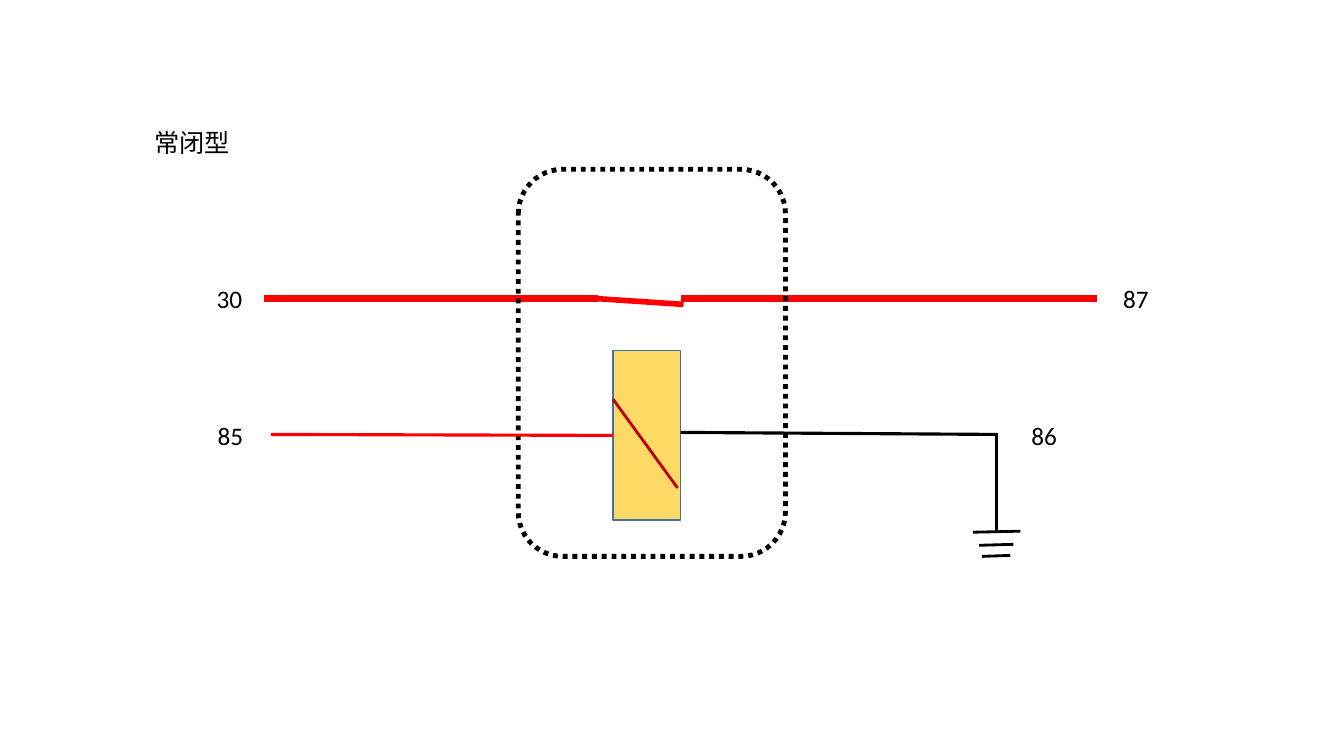
"""Builds a slide with the circuit diagram of a normally closed relay."""
from lxml import etree
from pptx import Presentation
from pptx import util as u
from pptx.dml.color import RGBColor
from pptx.enum import dml, shapes, text
from pptx.oxml import ns

BLACK = RGBColor(0x00, 0x00, 0x00)
RED = RGBColor(0xFF, 0x00, 0x00)
DARK_RED = RGBColor(0xC0, 0x00, 0x00)
YELLOW = RGBColor(0xFF, 0xD9, 0x66)
BLUE = RGBColor(0x43, 0x73, 0x9E)


class RelaySlide:
    font = "Calibri"
    size = u.Pt(18)

    def __init__(self, deck):
        self.slide = deck.slides.add_slide(deck.slide_layouts[5])

    def group(self):
        return self.slide.shapes.add_group_shape()

    def wire(self, start, end, color, width, group=None):
        ends = [u.Inches(value) for value in (*start, *end)]
        wire = (group or self.slide).shapes.add_connector(
            shapes.MSO_CONNECTOR.STRAIGHT, *ends)
        wire.line.color.rgb = color
        wire.line.width = u.Pt(width)
        etree.SubElement(wire._element.spPr, ns.qn("a:effectLst"))

    def block(self, kind, box, line, width, fill=None, dash=None, group=None):
        block = (group or self.slide).shapes.add_shape(
            kind, *[u.Inches(value) for value in box])
        block.shadow.inherit = False
        if fill is None:
            block.fill.background()
        else:
            block.fill.solid()
            block.fill.fore_color.rgb = fill
        block.line.color.rgb = line
        block.line.width = u.Pt(width)
        if dash is not None:
            block.line.dash_style = dash

    def fill_text(self, frame, words, align):
        frame.word_wrap = True
        frame.auto_size = text.MSO_AUTO_SIZE.SHAPE_TO_FIT_TEXT
        frame.vertical_anchor = text.MSO_ANCHOR.TOP
        frame.text = words
        paragraph = frame.paragraphs[0]
        paragraph.alignment = align
        paragraph.font.name = self.font
        paragraph.font.size = self.size
        paragraph.font.color.rgb = BLACK

    def title(self, words, box):
        title = self.slide.shapes.title
        title.left, title.top, title.width, title.height = [
            u.Inches(value) for value in box]
        self.fill_text(title.text_frame, words, text.PP_ALIGN.LEFT)

    def label(self, words, box, align=text.PP_ALIGN.LEFT):
        label = self.slide.shapes.add_textbox(
            *[u.Inches(value) for value in box])
        self.fill_text(label.text_frame, words, align)


def main():
    deck = Presentation()
    deck.slide_width, deck.slide_height = u.Inches(13.33), u.Inches(7.5)
    relay = RelaySlide(deck)
    relay.title("常闭型", (1.43, 1.21, 4.44, 0.4))

    relay.wire((5.88, 2.96), (6.78, 3.02), RED, 4)
    relay.wire((2.62, 2.96), (5.93, 2.96), RED, 4.5)
    relay.wire((6.75, 2.96), (10.88, 2.96), RED, 4.5)

    coil = relay.group()
    relay.block(shapes.MSO_SHAPE.RECTANGLE, (6.08, 3.48, 0.67, 1.68),
                BLUE, 1, fill=YELLOW, group=coil)
    relay.wire((6.08, 3.96), (6.72, 4.84), DARK_RED, 2, coil)

    relay.block(shapes.MSO_SHAPE.ROUNDED_RECTANGLE, (5.14, 1.68, 2.65, 3.84),
                BLACK, 3.5, dash=dml.MSO_LINE.ROUND_DOT)

    relay.wire((2.69, 4.31), (6.08, 4.32), RED, 2.25)
    relay.wire((6.75, 4.29), (9.89, 4.31), BLACK, 2.25)
    relay.wire((9.88, 4.3), (9.88, 5.28), BLACK, 2.25)

    ground = relay.group()
    for left, right, top in ((9.65, 10.12, 5.27), (9.71, 10.05, 5.4),
                             (9.74, 10.02, 5.51)):
        relay.wire((left, top + 0.01), (right, top), BLACK, 2, ground)

    relay.label("85", (1.95, 4.12, 0.67, 0.4), text.PP_ALIGN.CENTER)
    for pin, left, top in (("30", 2.05, 2.76), ("87", 11.04, 2.76),
                           ("86", 10.13, 4.12)):
        relay.label(pin, (left, top, 0.45, 0.4))

    deck.save("out.pptx")


if __name__ == "__main__":
    main()
